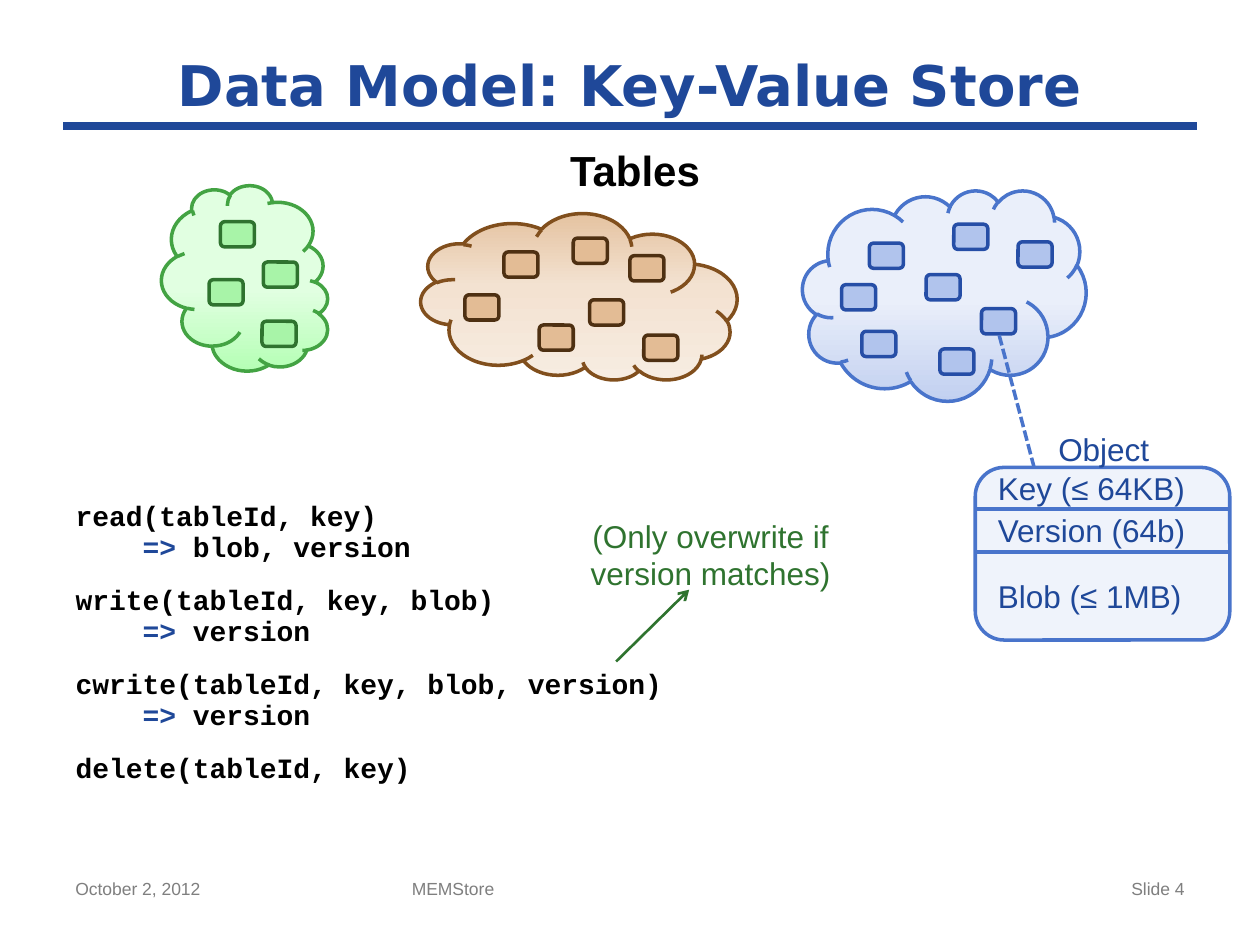
from lxml import etree
from pptx import Presentation
from pptx.dml.color import RGBColor
from pptx.enum.dml import MSO_LINE
from pptx.enum.shapes import MSO_CONNECTOR, MSO_SHAPE
from pptx.enum.text import MSO_ANCHOR, MSO_AUTO_SIZE, PP_ALIGN
from pptx.oxml import parse_xml
from pptx.oxml.ns import qn
from pptx.util import Inches, Pt

LEFT, CENTER, RIGHT = PP_ALIGN.LEFT, PP_ALIGN.CENTER, PP_ALIGN.RIGHT
TOP, MIDDLE = MSO_ANCHOR.TOP, MSO_ANCHOR.MIDDLE
CLOUD, ROUND = MSO_SHAPE.CLOUD, MSO_SHAPE.ROUNDED_RECTANGLE
STRAIGHT, DASH = MSO_CONNECTOR.STRAIGHT, MSO_LINE.SQUARE_DOT
FIXED = MSO_AUTO_SIZE.NONE
NAVY, BLUE, GREEN, GRAY, BLACK = "1F4899", "4974CB", "2F732F", "7F7F7F", "000000"
SPACE = "http://schemas.openxmlformats.org/drawingml/2006/main"

TABLES = [
    {"box": (1.21, 1.55, 1.47, 1.32), "turn": 90, "edge": "43A343",
     "stops": [(0, "E1FFE1"), (56, "E1FFE1"), (100, "B5FFB5")],
     "item": ("A8F4A8", GREEN),
     "spots": [(0.54, 0.21), (0.88, 0.53), (0.45, 0.67), (0.87, 1)]},
    {"box": (3.34, 1.7, 2.51, 1.32), "flip": True, "edge": "814F1D",
     "stops": [(0, "F7ECE1"), (57, "F3E2D1"), (100, "E5C3A1")],
     "item": ("E3BC95", "4E3012"),
     "spots": [(0.66, 0.3), (1.77, 0.96), (0.94, 0.88), (1.34, 0.68),
               (1.66, 0.33), (1.21, 0.19), (0.35, 0.64)]},
    {"box": (6.37, 1.51, 2.25, 1.67), "edge": BLUE,
     "stops": [(0, "EAEFFA"), (52, "EAEFFA"), (100, "C2D0F0")],
     "item": ("B1C4ED", "264EA6"),
     "spots": [(0.53, 0.42), (0.47, 1.12), (1.2, 0.27), (0.31, 0.75),
               (0.98, 0.67), (1.71, 0.41), (1.09, 1.26), (1.42, 0.94)]},
]
CALLS = [
    ("read(tableId, key)", " blob, version"),
    ("write(tableId, key, blob)", " version"),
    ("cwrite(tableId, key, blob, version)", " version"),
    ("delete(tableId, key)", None),
]


def paint(hue):
    """Turn a hex string into a colour."""
    return RGBColor.from_string(hue)


def place(shape, box):
    """Move a shape to a box given in inches."""
    shape.left, shape.top, shape.width, shape.height = map(Inches, box)


def style(run, size, hue, bold=False, face="Arial"):
    """Format one run."""
    font = run.font
    font.size, font.bold, font.name = Pt(size), bold, face
    font.color.rgb = paint(hue)


def label(slide, box, text, size, hue, align=LEFT, bold=False, inset=True, wrap=True):
    """Add a text box with evenly formatted lines."""
    frame = slide.shapes.add_textbox(*map(Inches, box)).text_frame
    frame.word_wrap = wrap
    if not inset:
        frame.margin_left = frame.margin_right = 0
        frame.margin_top = frame.margin_bottom = 0
    frame.text = text
    for para in frame.paragraphs:
        para.alignment = align
        for run in para.runs:
            style(run, size, hue, bold)


def rule(slide, start, end, hue, width, dash=None, arrow=False):
    """Draw a straight line between two points."""
    line = slide.shapes.add_connector(STRAIGHT, *map(Inches, start + end))
    line.line.color.rgb = paint(hue)
    line.line.width = Pt(width)
    if dash:
        line.line.dash_style = dash
    if arrow:
        etree.SubElement(line.line._get_or_add_ln(), qn("a:tailEnd"), type="arrow")
    etree.SubElement(line._element.spPr, qn("a:effectLst"))


def block(shapes, kind, box, edge, fill=None):
    """Add an outlined preset shape without shadow."""
    shape = shapes.add_shape(kind, *map(Inches, box))
    shape.shadow.inherit = False
    if fill:
        shape.fill.solid()
        shape.fill.fore_color.rgb = paint(fill)
    shape.line.color.rgb = paint(edge)
    shape.line.width = Pt(2)
    return shape


def shade(shape, stops, fixed):
    """Fill a shape with a downward gradient."""
    marks = "".join(f'<a:gs pos="{pos * 1000}"><a:srgbClr val="{hue}"/></a:gs>'
                    for pos, hue in stops)
    spin = 0 if fixed else 1
    grad = parse_xml(f'<a:gradFill xmlns:a="{SPACE}" rotWithShape="{spin}">'
                     f'<a:gsLst>{marks}</a:gsLst>'
                     '<a:lin ang="5400000" scaled="0"/></a:gradFill>')
    shape._element.spPr.find(qn("a:prstGeom")).addnext(grad)


def table(slide, box, stops, edge, item, spots, turn=0, flip=False):
    """Draw a cloud with its objects as one group."""
    shapes = slide.shapes.add_group_shape().shapes
    cloud = block(shapes, CLOUD, box, edge)
    shade(cloud, stops, turn)
    cloud.rotation = turn
    if flip:
        cloud._element.spPr.xfrm.set("flipV", "1")
    fill, rim = item
    for x, y in spots:
        block(shapes, ROUND, (box[0] + x, box[1] + y, 0.27, 0.2), rim, fill)


def head(slide, box):
    """Set the title and the rule below it."""
    left, top, width, height = box
    title = slide.shapes.title
    place(title, box)
    frame = title.text_frame
    frame.text = "Data Model: Key-Value Store"
    frame.vertical_anchor = MIDDLE
    frame.auto_size = FIXED
    para = frame.paragraphs[0]
    para.alignment = CENTER
    style(para.runs[0], 32, NAVY, True, "DejaVu Sans")
    base = top + height
    rule(slide, (left, base), (left + width, base), NAVY, 4.5)


def code(slide, box):
    """List the calls and their results in the body."""
    body = slide.placeholders[1]
    place(body, box)
    frame = body.text_frame
    frame.auto_size, frame.vertical_anchor = FIXED, TOP
    for i, (call, result) in enumerate(CALLS):
        para = frame.add_paragraph() if i else frame.paragraphs[0]
        para.line_spacing = Pt(18)
        para.space_before = Pt(12 if i else 0)
        props = para._p.get_or_add_pPr()
        props.set("marL", "0")
        props.set("indent", "0")
        etree.SubElement(props, qn("a:buNone"))
        para.text = call
        if result:
            para.add_line_break()
            for part in ("    ", "=>", result):
                para.add_run().text = part
        for run in para.runs:
            style(run, 16, NAVY if run.text == "=>" else BLACK, True, "Courier New")


def card(slide, box):
    """Draw the make-up of one object."""
    left, top, width, height = box
    block(slide.shapes, ROUND, box, BLUE, "EFF3FB")
    rows = [(0.01, "Key (≤ 64KB)"), (0.35, "Version (64b)"), (0.87, "Blob (≤ 1MB)")]
    for y, text in rows:
        label(slide, (left + 0.18, top + y, 1.83, 0.3), text, 18, NAVY, inset=False)
    for y in (0.33, 0.67):
        rule(slide, (left, top + y), (left + width, top + y), BLUE, 2)
    label(slide, (left + 0.18, top - 0.3, 1.68, 0.3), "Object", 18, NAVY, CENTER, inset=False)


def note(slide, box):
    """Explain the conditional write with an arrow."""
    left, top = box[:2]
    label(slide, box, "(Only overwrite if\nversion matches)", 18, GREEN, CENTER, wrap=False)
    rule(slide, (left + 0.31, top + 1.2), (left + 0.89, top + 0.63), GREEN, 1.5, arrow=True)


def foot(slide, box):
    """Write date, project and slide number."""
    left, top, width, height = box
    parts = [(0, 2.33, "October 2, 2012", LEFT), (2.67, 3.75, "MEMStore", LEFT),
             (width - 2.33, 2.33, "Slide 4", RIGHT)]
    for x, wide, text, align in parts:
        label(slide, (left + x, top, wide, height), text, 10, GRAY, align)


def main():
    """Build and save the slide."""
    deck = Presentation()
    deck.slide_width, deck.slide_height = Inches(10), Inches(7.5)
    slide = deck.slides.add_slide(deck.slide_layouts[1])
    head(slide, (0.5, 0.33, 9, 0.67))
    code(slide, (0.5, 3.92, 6.85, 3))
    foot(slide, (0.5, 6.92, 9, 0.43))
    label(slide, (4.42, 1.1, 1.24, 0.5), "Tables", 24, BLACK, CENTER, True, wrap=False)
    card(slide, (7.74, 3.71, 2.02, 1.37))
    for spec in TABLES:
        table(slide, **spec)
    rule(slide, (7.93, 2.66), (8.21, 3.72), BLUE, 2, DASH)
    note(slide, (4.58, 4.05, 2.12, 0.71))
    deck.save("out.pptx")


if __name__ == "__main__":
    main()
